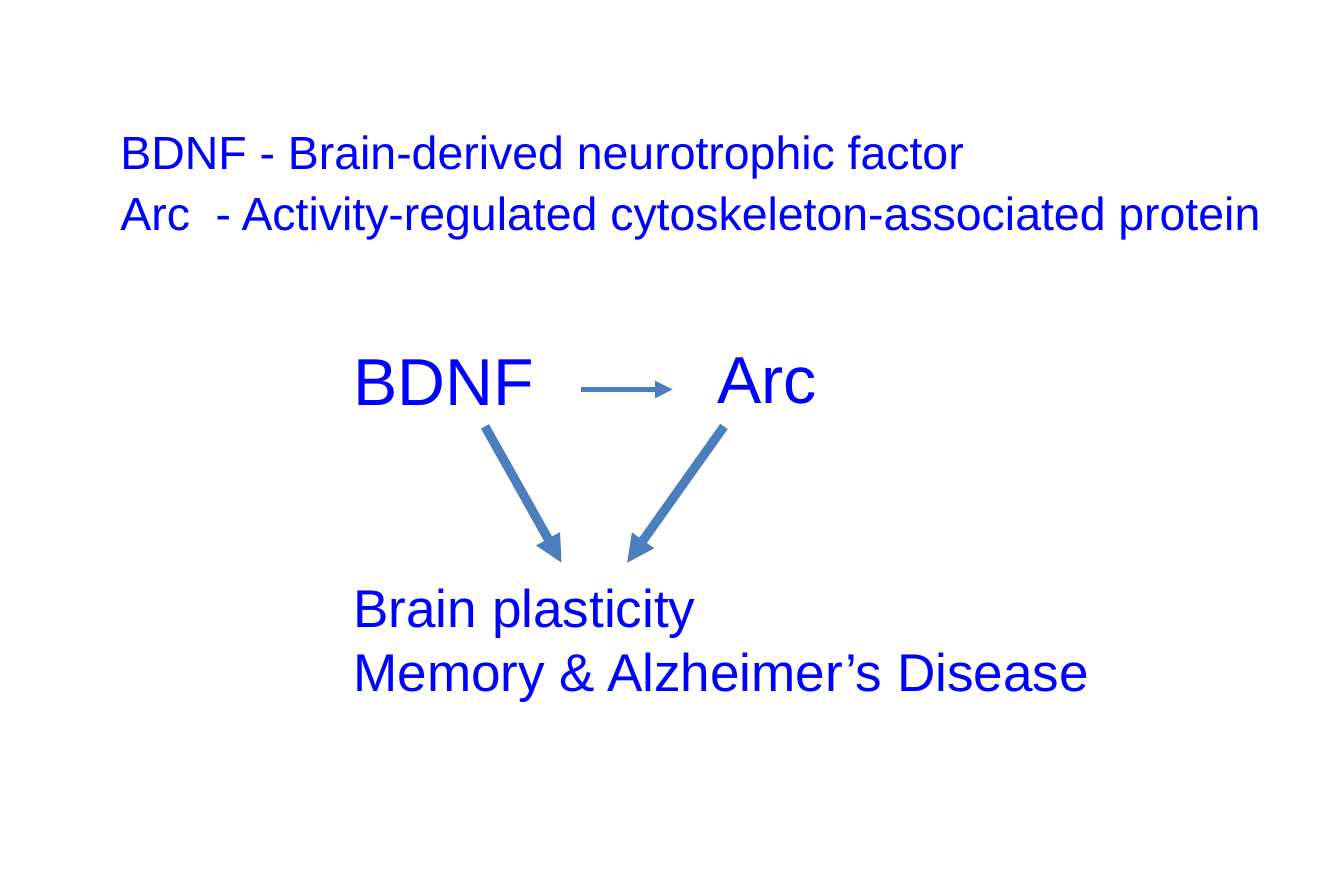
from lxml import etree
from pptx import Presentation
from pptx import util as u
from pptx.dml.color import RGBColor
from pptx.enum import shapes, text
from pptx.oxml import ns

BLUE = RGBColor(0x00, 0x00, 0xFF)
STEEL = RGBColor(0x4B, 0x7E, 0xBC)


class SlideBuilder:
    font = "Arial"

    def __init__(self, slide):
        self.slide = slide

    def label(self, words, left, top, width, height, size):
        box = self.slide.shapes.add_textbox(*map(u.Inches, (left, top, width, height)))
        frame = box.text_frame
        frame.word_wrap = False
        frame.auto_size = text.MSO_AUTO_SIZE.SHAPE_TO_FIT_TEXT
        frame.text = words
        for para in frame.paragraphs:
            for span in para.runs:
                span.font.name = self.font
                span.font.size = u.Pt(size)
                span.font.color.rgb = BLUE

    def arrow(self, start, end, weight):
        arrow = self.slide.shapes.add_connector(
            shapes.MSO_CONNECTOR.STRAIGHT, *map(u.Inches, (*start, *end)))
        arrow.line.color.rgb = STEEL
        arrow.line.width = u.Pt(weight)
        properties = arrow.element.spPr
        etree.SubElement(properties.find(ns.qn("a:ln")), ns.qn("a:tailEnd"), type="triangle")
        etree.SubElement(properties, ns.qn("a:effectLst"))


def main():
    deck = Presentation()
    deck.slide_width = u.Inches(11.25)
    deck.slide_height = u.Inches(7.5)
    page = SlideBuilder(deck.slides.add_slide(deck.slide_layouts[6]))

    page.label("BDNF - Brain-derived neurotrophic factor", 0.91, 0.98, 7.35, 0.57, 28)
    page.label("Arc  - Activity-regulated cytoskeleton-associated protein",
               0.91, 1.49, 9.86, 0.57, 28)
    page.label("Arc", 5.91, 2.77, 1.04, 0.77, 40)
    page.label("BDNF", 2.86, 2.79, 1.73, 0.77, 40)

    page.arrow((4.86, 3.26), (5.63, 3.26), 3.5)
    page.arrow((6.06, 3.57), (5.25, 4.71), 5.5)
    page.arrow((4.06, 3.57), (4.7, 4.71), 5.5)

    page.label("Brain plasticity\nMemory & Alzheimer’s Disease", 2.86, 4.76, 6.41, 1.18, 32)
    deck.save("out.pptx")


if __name__ == "__main__":
    main()
